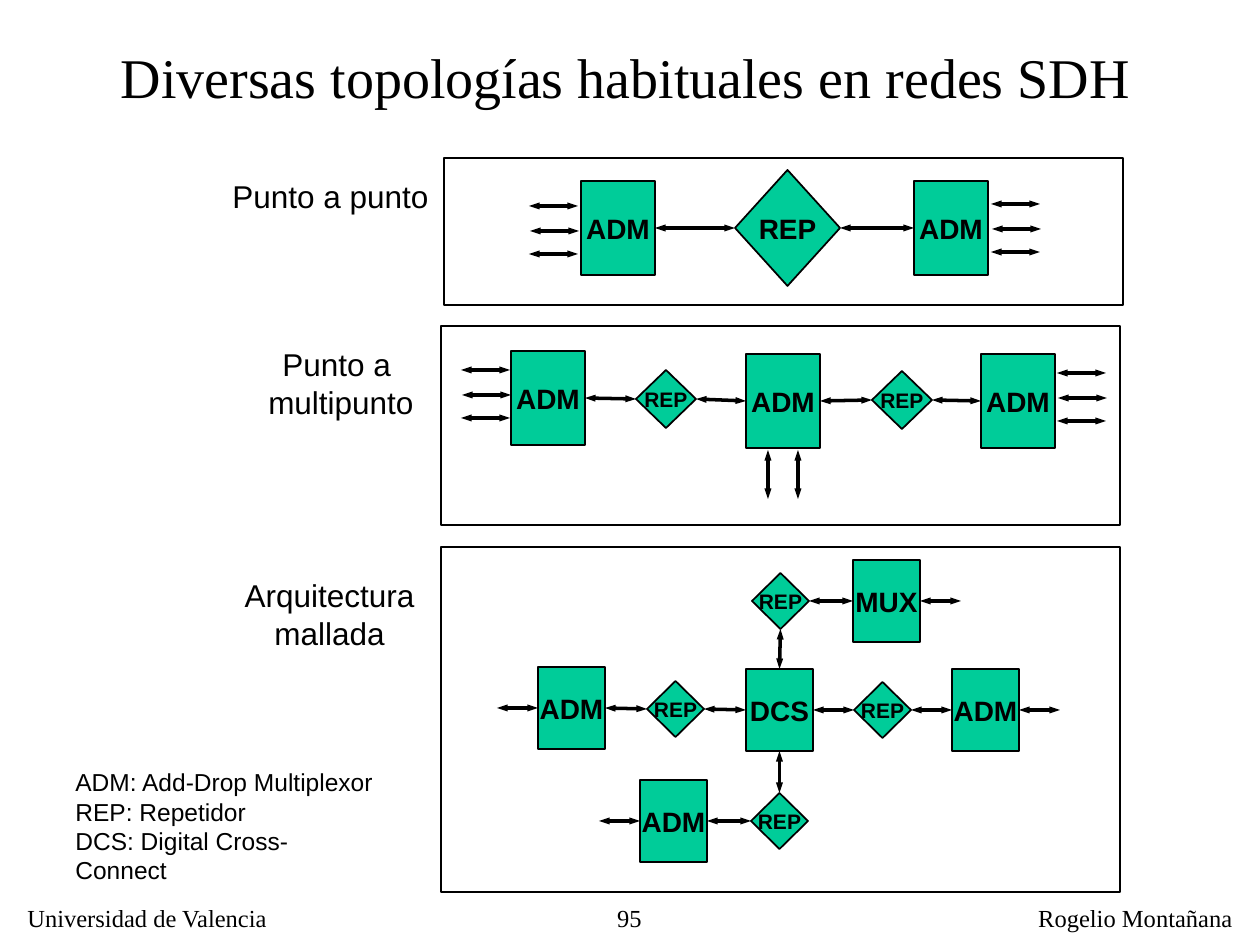
from lxml import etree
from pptx import Presentation
from pptx.dml.color import RGBColor
from pptx.enum.shapes import MSO_CONNECTOR, MSO_SHAPE
from pptx.enum.text import MSO_ANCHOR, MSO_AUTO_SIZE, PP_ALIGN
from pptx.oxml.ns import qn
from pptx.util import Emu, Pt

LEFT, CENTER, RIGHT = PP_ALIGN.LEFT, PP_ALIGN.CENTER, PP_ALIGN.RIGHT
RECTANGLE, DIAMOND = MSO_SHAPE.RECTANGLE, MSO_SHAPE.DIAMOND
STRAIGHT = MSO_CONNECTOR.STRAIGHT
BLACK = RGBColor(0x00, 0x00, 0x00)
GREEN = RGBColor(0x00, 0xCC, 0x99)
SERIF, SANS = "Times New Roman", "Arial"
TOP_SITE, LEFT_SITE, BOTTOM_SITE, RIGHT_SITE = range(4)

# Content: lengths in px, 126 px to the inch
TITLE = "Diversas topologías habituales en redes SDH"
TITLE_BOX = (108, 36, 1056, 79)

# text, box, size, font, alignment
TEXTS = [
    ("Punto a punto", (220, 171, 224, 50), 18, SANS, LEFT),
    ("Punto a \nmultipunto", (246, 339, 190, 88), 18, SANS, CENTER),
    ("Arquitectura\nmallada", (224, 570, 211, 88), 18, SANS, CENTER),
    ("ADM: Add-Drop Multiplexor\nREP: Repetidor\nDCS: Digital Cross-Connect",
     (63, 761, 326, 130), 14, SANS, LEFT),
    ("Universidad de Valencia", (15, 897, 280, 42), 14, SERIF, LEFT),
    ("95", (520, 897, 134, 39), 14, SERIF, RIGHT),
    ("Rogelio Montañana", (1005, 897, 240, 42), 14, SERIF, RIGHT),
]

PANELS = [(444, 158, 679, 147), (441, 326, 679, 199), (441, 547, 679, 345)]

# kind of node: preset, width, height, text size
NODE_KINDS = {
    "box": (RECTANGLE, 74, 94, 16),
    "small box": (RECTANGLE, 67, 82, 16),
    "large repeater": (DIAMOND, 105, 116, 16),
    "repeater": (DIAMOND, 60, 58, 12),
    "small repeater": (DIAMOND, 57, 56, 12),
}

# name: label, kind, left, top
NODES = {
    "point left": ("ADM", "box", 581, 181),
    "point repeater": ("REP", "large repeater", 735, 170),
    "point right": ("ADM", "box", 914, 181),
    "multi left": ("ADM", "box", 511, 351),
    "multi repeater 1": ("REP", "repeater", 636, 370),
    "multi middle": ("ADM", "box", 746, 354),
    "multi repeater 2": ("REP", "repeater", 872, 371),
    "multi right": ("ADM", "box", 981, 354),
    "mesh left": ("ADM", "small box", 538, 667),
    "mesh left repeater": ("REP", "small repeater", 647, 681),
    "mesh centre": ("DCS", "small box", 746, 669),
    "mesh right repeater": ("REP", "small repeater", 854, 682),
    "mesh right": ("ADM", "small box", 952, 669),
    "mesh top repeater": ("REP", "small repeater", 752, 573),
    "mesh top": ("MUX", "small box", 853, 560),
    "mesh bottom": ("ADM", "small box", 640, 780),
    "mesh bottom repeater": ("REP", "small repeater", 751, 793),
}

# Each chain is joined from left to right, or from top to bottom
ROWS = [
    ["point left", "point repeater", "point right"],
    ["multi left", "multi repeater 1", "multi middle", "multi repeater 2", "multi right"],
    ["mesh left", "mesh left repeater", "mesh centre", "mesh right repeater", "mesh right"],
    ["mesh top repeater", "mesh top"],
    ["mesh bottom", "mesh bottom repeater"],
]
COLUMNS = [["mesh top repeater", "mesh centre", "mesh bottom repeater"]]

# Free tributaries: left and top of each set of three, then the vertical pair
TRIBUTARY_SETS = [(529, 206), (991, 204), (461, 370), (1057, 373)]
TRIBUTARY_OFFSETS = [(0, 0), (1, 25), (0, 48)]
TRIBUTARY_LENGTH = 49
VERTICAL_TRIBUTARIES = [(768, 450), (798, 450)]

# Mesh tributaries leave the middle of a node's side
MESH_TRIBUTARIES = [("mesh left", LEFT_SITE), ("mesh bottom", LEFT_SITE),
                    ("mesh right", RIGHT_SITE), ("mesh top", RIGHT_SITE)]
MESH_LENGTH = 41


def px(value):
    return Emu(round(value * 914400 / 126))


def format_text(shape, text, size, font, alignment, bold=False):
    frame = shape.text_frame
    frame.text = text
    frame.word_wrap = True
    for paragraph in frame.paragraphs:
        paragraph.alignment = alignment
        for run in paragraph.runs:
            run.font.size = Pt(size)
            run.font.name = font
            run.font.bold = bold
            run.font.color.rgb = BLACK
    return frame


def add_outlined(slide, preset, box):
    shape = slide.shapes.add_shape(preset, *map(px, box))
    shape.shadow.inherit = False
    shape.fill.background()
    shape.line.color.rgb = BLACK
    shape.line.width = Pt(1)
    return shape


def add_node(slide, label, kind, left, top):
    preset, width, height, size = NODE_KINDS[kind]
    shape = add_outlined(slide, preset, (left, top, width, height))
    shape.fill.solid()
    shape.fill.fore_color.rgb = GREEN
    frame = format_text(shape, label, size, SANS, CENTER, bold=True)
    frame.word_wrap = False
    frame.vertical_anchor = MSO_ANCHOR.MIDDLE
    return shape


def add_arrow(slide, start=(0, 0), end=(0, 0)):
    arrow = slide.shapes.add_connector(STRAIGHT, *map(px, start + end))
    arrow.line.color.rgb = BLACK
    arrow.line.width = Pt(2)
    line = arrow.line._get_or_add_ln()
    for tag in ("a:headEnd", "a:tailEnd"):
        etree.SubElement(line, qn(tag), type="triangle", w="sm", len="med")
    etree.SubElement(arrow._element.spPr, qn("a:effectLst"))
    return arrow


def join_chain(slide, nodes, chain, exit_site, entry_site):
    for first, second in zip(chain, chain[1:]):
        arrow = add_arrow(slide)
        arrow.begin_connect(nodes[first], exit_site)
        arrow.end_connect(nodes[second], entry_site)


def main():
    presentation = Presentation()
    presentation.slide_width, presentation.slide_height = px(1260), px(945)
    slide = presentation.slides.add_slide(presentation.slide_layouts[5])

    # Title
    title = slide.shapes.title
    title.left, title.top, title.width, title.height = map(px, TITLE_BOX)
    frame = format_text(title, TITLE, 32, SERIF, LEFT)
    frame.auto_size = MSO_AUTO_SIZE.NONE
    frame.vertical_anchor = MSO_ANCHOR.TOP

    # Labels, legend and footer
    for text, box, size, font, alignment in TEXTS:
        text_box = slide.shapes.add_textbox(*map(px, box))
        format_text(text_box, text, size, font, alignment)

    # Panels and nodes
    for box in PANELS:
        add_outlined(slide, RECTANGLE, box)
    nodes = {name: add_node(slide, *node) for name, node in NODES.items()}

    # Links between nodes
    for chain in ROWS:
        join_chain(slide, nodes, chain, RIGHT_SITE, LEFT_SITE)
    for chain in COLUMNS:
        join_chain(slide, nodes, chain, BOTTOM_SITE, TOP_SITE)

    # Tributaries
    for left, top in TRIBUTARY_SETS:
        for shift, drop in TRIBUTARY_OFFSETS:
            x, y = left + shift, top + drop
            add_arrow(slide, (x, y), (x + TRIBUTARY_LENGTH, y))
    for x, y in VERTICAL_TRIBUTARIES:
        add_arrow(slide, (x, y), (x, y + TRIBUTARY_LENGTH))
    for name, site in MESH_TRIBUTARIES:
        _, kind, left, top = NODES[name]
        _, width, height, _ = NODE_KINDS[kind]
        y = top + height // 2
        x = left - MESH_LENGTH if site == LEFT_SITE else left + width + MESH_LENGTH
        add_arrow(slide, (x, y), (x, y)).end_connect(nodes[name], site)

    presentation.save("out.pptx")


if __name__ == "__main__":
    main()
